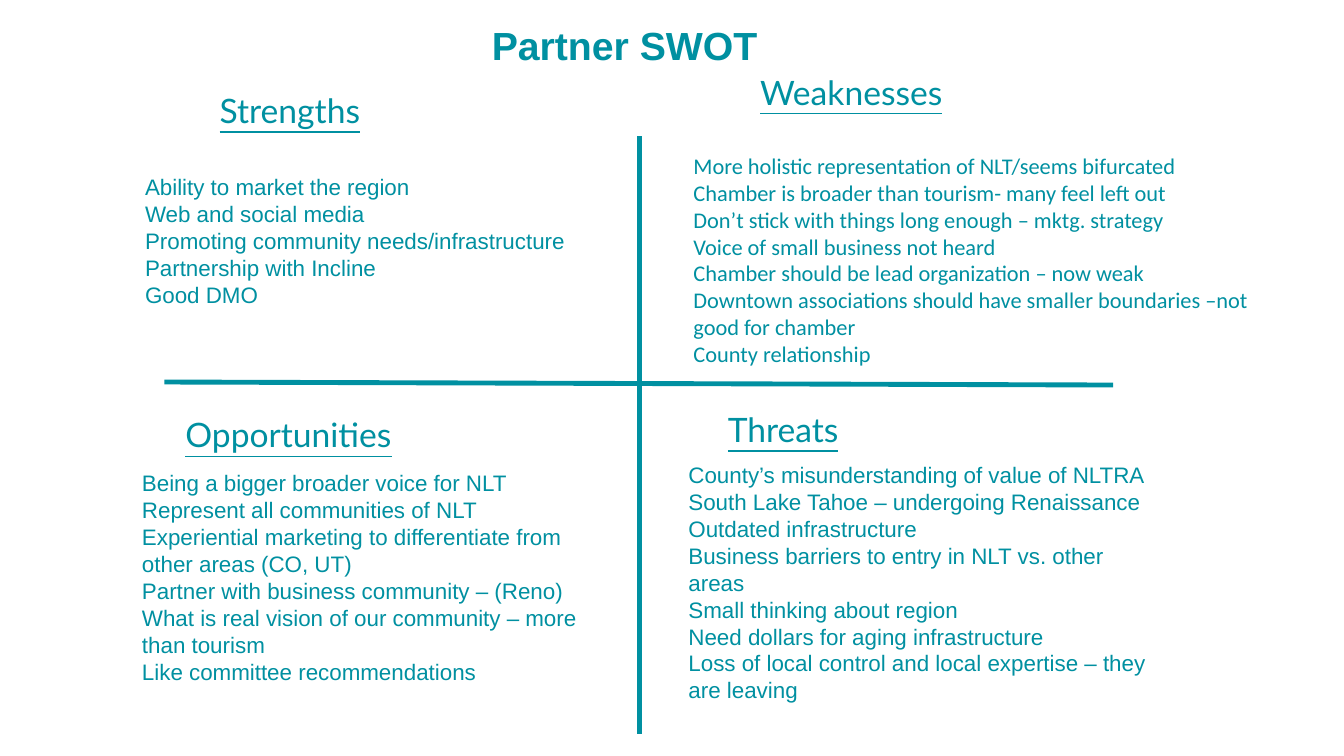
from lxml.etree import SubElement
from pptx import Presentation
from pptx.dml.color import RGBColor
from pptx.enum.shapes import MSO_CONNECTOR
from pptx.enum.text import MSO_ANCHOR, MSO_AUTO_SIZE
from pptx.oxml.ns import qn
from pptx.util import Inches, Pt

TEAL = "0090A1"

QUADRANTS = [
    ("Strengths", (2.08, 0.84, 1.72, 0.5), (1.34, 1.67, 5.12, 1.72), "Arial", [
        "Ability to market the region",
        "Web and social media",
        "Promoting community needs/infrastructure",
        "Partnership with Incline",
        "Good DMO",
    ]),
    ("Weaknesses", (7.44, 0.66, 2.11, 0.5), (6.78, 1.46, 6.1, 2.86), "Calibri", [
        "More holistic representation of NLT/seems bifurcated",
        "Chamber is broader than tourism- many feel left out",
        "Don’t stick with things long enough – mktg. strategy",
        "Voice of small business not heard",
        "Chamber should be lead organization – now weak",
        "Downtown associations should have smaller boundaries –not good for chamber",
        "County relationship",
    ]),
    ("Opportunities", (1.74, 4.06, 2.41, 0.5), (1.31, 4.61, 4.71, 3.06), "Arial", [
        "Being a bigger broader voice for NLT",
        "Represent all communities of NLT",
        "Experiential marketing to differentiate from other areas (CO, UT)",
        "Partner with business community – (Reno)",
        "What is real vision of our community – more than tourism",
        "Like committee recommendations",
    ]),
    ("Threats", (7.12, 4.01, 1.38, 0.5), (6.73, 4.53, 4.77, 3.06), "Arial", [
        "County’s misunderstanding of value of NLTRA",
        "South Lake Tahoe – undergoing Renaissance",
        "Outdated infrastructure",
        "Business barriers to entry in NLT vs. other areas",
        "Small thinking about region",
        "Need dollars for aging infrastructure",
        "Loss of local control and local expertise – they are leaving",
    ]),
]


def color(hex_code):
    return RGBColor.from_string(hex_code)


def add_text(slide, lines, area, font="Arial", size=16, bold=False, underline=False,
             wrap=True, spacing=None, anchor=MSO_ANCHOR.TOP, fit=MSO_AUTO_SIZE.SHAPE_TO_FIT_TEXT):
    frame = slide.shapes.add_textbox(*map(Inches, area)).text_frame
    frame.word_wrap = wrap
    frame.auto_size = fit
    frame.vertical_anchor = anchor
    frame.text = "\n".join(lines)
    for paragraph in frame.paragraphs:
        paragraph.line_spacing = spacing
        for run in paragraph.runs:
            run.font.name = font
            run.font.size = Pt(size)
            run.font.bold = bold
            run.font.underline = underline
            run.font.color.rgb = color(TEAL)


def add_axis(slide, start, end):
    axis = slide.shapes.add_connector(MSO_CONNECTOR.STRAIGHT, *map(Inches, start + end))
    axis.line.color.rgb = color(TEAL)
    axis.line.width = Pt(3.5)
    SubElement(axis._element.spPr, qn("a:effectLst"))


def main():
    deck = Presentation()
    deck.slide_width = Inches(13.33)
    deck.slide_height = Inches(7.5)
    slide = deck.slides.add_slide(deck.slide_layouts[6])

    add_axis(slide, (6.34, 1.35), (6.34, 7.28))
    add_axis(slide, (1.63, 3.79), (11.04, 3.82))
    add_text(slide, ["Partner SWOT"], (4.78, 0.2, 11.5, 0.54), size=28, bold=True,
             spacing=0.9, anchor=MSO_ANCHOR.MIDDLE, fit=MSO_AUTO_SIZE.NONE)
    for heading, heading_area, points_area, points_font, points in QUADRANTS:
        add_text(slide, [heading], heading_area, font="Lato", size=24,
                 underline=True, wrap=False)
        add_text(slide, points, points_area, font=points_font, spacing=Pt(19.2))

    deck.save("out.pptx")


if __name__ == "__main__":
    main()
